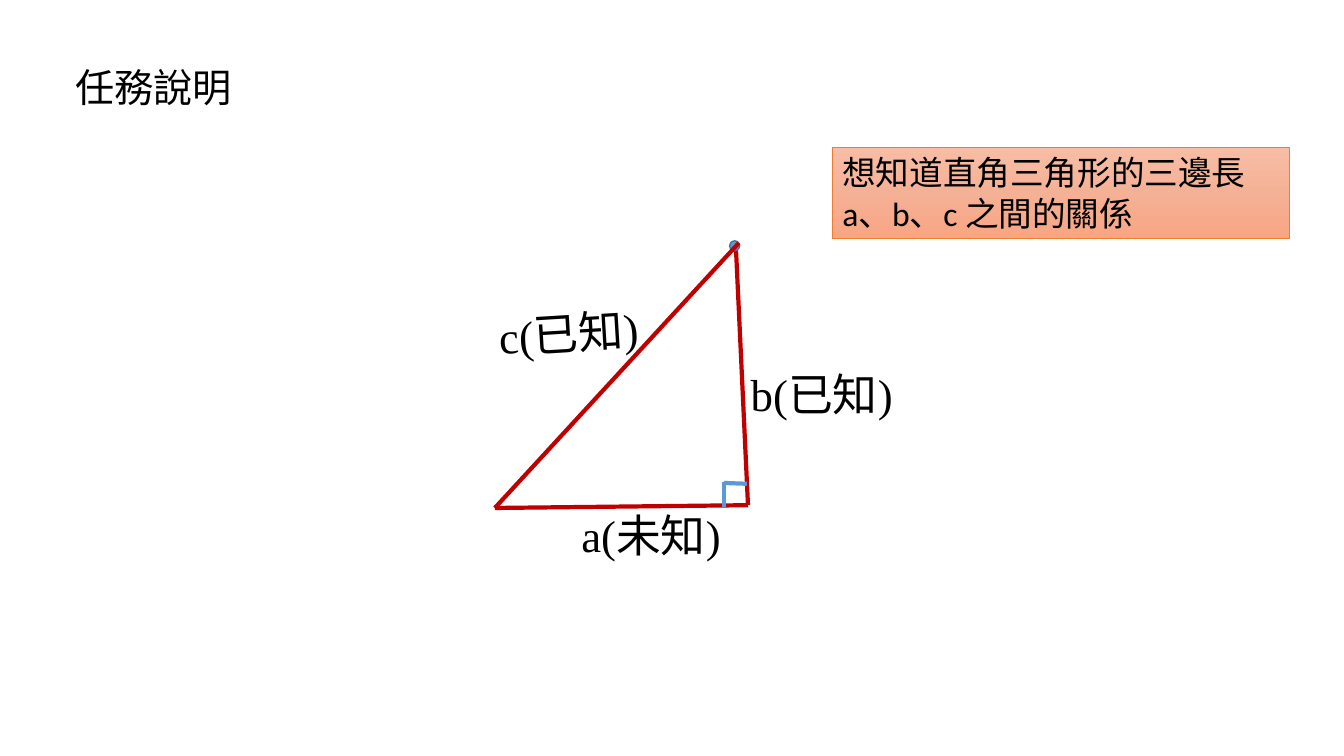
from copy import deepcopy

from lxml.etree import SubElement
from pptx import Presentation
from pptx.dml.color import RGBColor
from pptx.enum.shapes import MSO_CONNECTOR as Connector, MSO_SHAPE as Shape
from pptx.enum.text import MSO_ANCHOR as Anchor, MSO_AUTO_SIZE as AutoSize, PP_ALIGN as Align
from pptx.oxml.ns import qn
from pptx.util import Cm, Pt

BLACK = RGBColor(0x00, 0x00, 0x00)
RED = RGBColor(0xC0, 0x00, 0x00)
BLUE = RGBColor(0x5B, 0x9B, 0xD5)
DARK_BLUE = RGBColor(0x43, 0x73, 0x9E)
ORANGE = RGBColor(0xED, 0x7D, 0x31)
PEACH = [
    (0, RGBColor(0xF7, 0xBD, 0xA5)),
    (0.5, RGBColor(0xF5, 0xB1, 0x96)),
    (1, RGBColor(0xF8, 0xA5, 0x82)),
]
BODY_FONT = "Calibri"
MATH_FONT = "Times New Roman"
CJK_FONT = "Noto Sans CJK SC"


def add_text(para, text, font=BODY_FONT, size=24, color=BLACK):
    span = para.add_run()
    span.text = text
    span.font.name = font
    span.font.size = Pt(size)
    span.font.color.rgb = color
    SubElement(span.font._element, qn("a:ea")).set("typeface", CJK_FONT)


class TaskSlide:
    def __init__(self, deck):
        self.page = deck.slides.add_slide(deck.slide_layouts[6])
        self.shapes = self.page.shapes

    def segment(self, start, end, color):
        line = self.shapes.add_connector(
            Connector.STRAIGHT, *(Cm(value) for value in (*start, *end)))
        line.line.color.rgb = color
        line.line.width = Pt(3)
        SubElement(line._element.spPr, qn("a:effectLst"))

    def preset(self, kind, place, border, width):
        shape = self.shapes.add_shape(kind, *(Cm(value) for value in place))
        shape.shadow.inherit = False
        shape.line.color.rgb = border
        shape.line.width = Pt(width)
        return shape

    def dot(self, place):
        shape = self.preset(Shape.OVAL, place, DARK_BLUE, 1)
        shape.fill.solid()
        shape.fill.fore_color.rgb = BLUE

    def text_box(self, place, spans, size, wrap, rotation=0):
        box = self.shapes.add_textbox(*(Cm(value) for value in place))
        box.rotation = rotation
        frame = box.text_frame
        frame.word_wrap = wrap
        frame.auto_size = AutoSize.SHAPE_TO_FIT_TEXT if not wrap else AutoSize.NONE
        for text, font in spans:
            add_text(frame.paragraphs[0], text, font=font, size=size)

    def side_label(self, side, state, left, top, rotation=0):
        spans = [(f"{side}(", MATH_FONT), (state, CJK_FONT), (")", MATH_FONT)]
        self.text_box((left, top, 4.08, 1.62), spans, 32, True, rotation)

    def note(self, place, rows):
        shape = self.preset(Shape.RECTANGLE, place, ORANGE, 0.5)
        shape.fill.gradient()
        shape.fill.gradient_angle = 270
        first = shape._element.spPr.find(".//" + qn("a:gs"))
        first.addnext(deepcopy(first))
        for stop, (position, color) in zip(shape.fill.gradient_stops, PEACH):
            stop.position = position
            stop.color.rgb = color
        frame = shape.text_frame
        frame.word_wrap = True
        frame.vertical_anchor = Anchor.TOP
        for index, row in enumerate(rows):
            para = frame.add_paragraph() if index else frame.paragraphs[0]
            para.alignment = Align.LEFT
            add_text(para, row)


def main():
    deck = Presentation()
    deck.slide_width, deck.slide_height = Cm(33.87), Cm(19.05)
    task = TaskSlide(deck)

    left_corner, right_corner = (12.47, 12.8), (18.85, 12.73)
    task.segment(left_corner, right_corner, RED)
    task.segment(right_corner, (18.54, 6.12), RED)
    task.dot((18.39, 6.07, 0.25, 0.25))
    task.segment(left_corner, (18.62, 6.12), RED)

    task.side_label("a", "未知", 14.4, 12.67)
    task.side_label("b", "已知", 18.67, 9.12)
    task.side_label("c", "已知", 12.32, 7.57, rotation=356.5)

    task.segment((18.82, 12.19), (18.24, 12.17), BLUE)
    task.segment((18.24, 12.78), (18.24, 12.14), BLUE)

    task.note((20.98, 3.71, 11.51, 2.31),
              ["想知道直角三角形的三邊長", "a、b、c 之間的關係"])
    task.text_box((1.65, 1.47, 4.5, 1.45), [("任務說明", BODY_FONT)], 28, False)
    deck.save("out.pptx")


if __name__ == "__main__":
    main()
